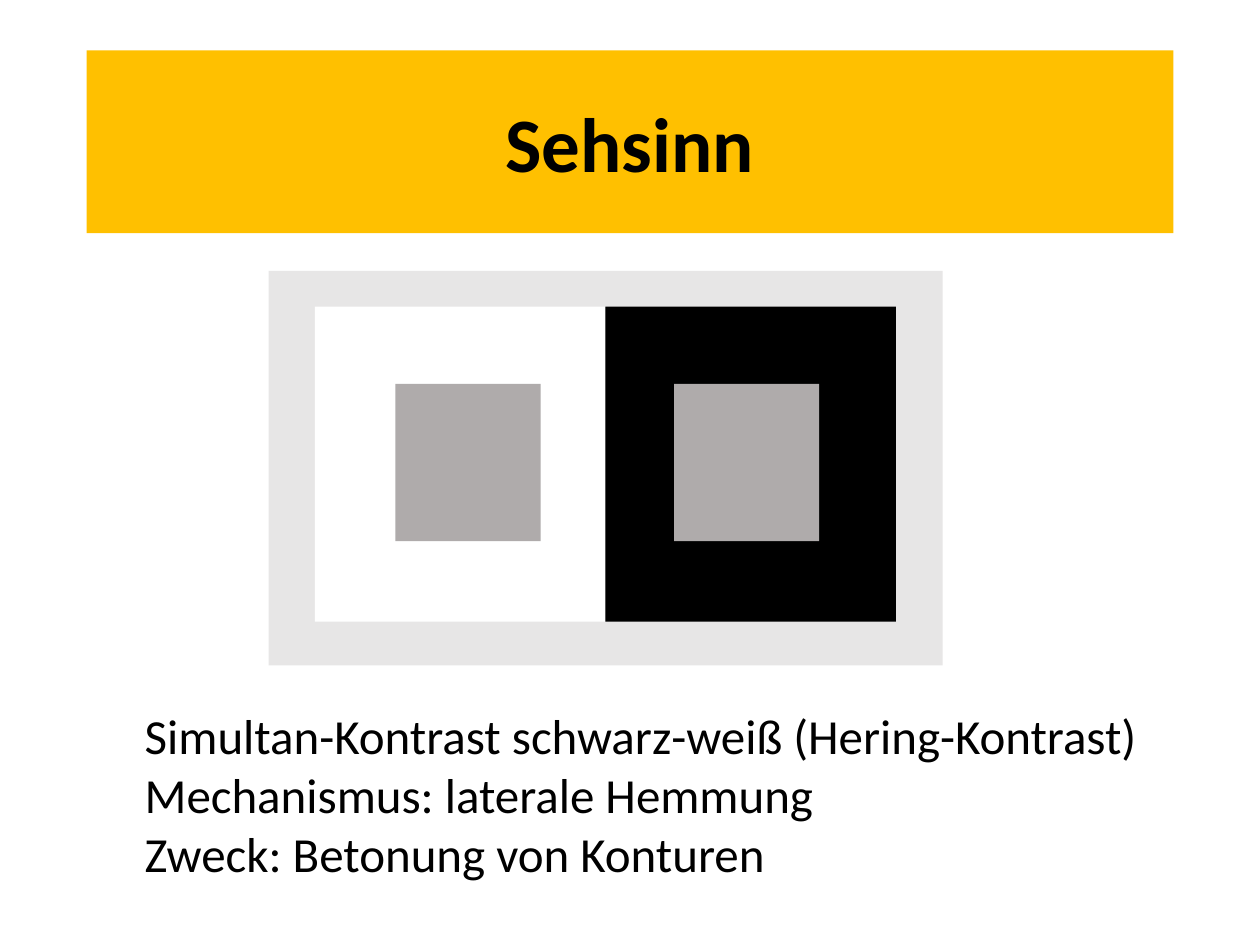
from typing import NamedTuple

from pptx import Presentation
from pptx.dml.color import RGBColor
from pptx.enum.shapes import MSO_SHAPE as Preset
from pptx.enum.text import MSO_ANCHOR as Anchor, MSO_AUTO_SIZE as AutoSize, PP_ALIGN as Align
from pptx.shapes.autoshape import Shape
from pptx.slide import Slide
from pptx.text.text import TextFrame
from pptx.util import Pt


class Box(NamedTuple):
    left: float
    top: float
    width: float
    height: float


class Contrast(NamedTuple):
    field_color: str
    patch_left: float


FONT = "Calibri"
BLACK = "000000"
HEADING_BOX = Box(49.5, 28.8, 621, 104.4)
FRAME_BOX = Box(153.5, 154.8, 385.2, 225.4)
FIELD_BOX = Box(180, 175.2, 166, 180)
PATCH_TOP = 219.3
CONTRASTS = [Contrast("FFFFFF", 226), Contrast(BLACK, 385.2)]
EXPLANATION_BOX = Box(75.6, 399.6, 582.5, 108.7)
EXPLANATION = [
    "Simultan-Kontrast schwarz-weiß (Hering-Kontrast)",
    "Mechanismus: laterale Hemmung",
    "Zweck: Betonung von Konturen",
]


def rgb(color: str) -> RGBColor:
    return RGBColor.from_string(color)


def add_rectangle(slide: Slide, box: Box, color: str) -> Shape:
    rectangle = slide.shapes.add_shape(Preset.RECTANGLE, *map(Pt, box))
    rectangle.shadow.inherit = False
    rectangle.fill.solid()
    rectangle.fill.fore_color.rgb = rgb(color)
    rectangle.line.fill.background()
    return rectangle


def write(frame: TextFrame, text: str, size: float, align: Align, bold: bool = False) -> None:
    frame.text = text
    frame.word_wrap = True
    for paragraph in frame.paragraphs:
        paragraph.alignment = align
        for run in paragraph.runs:
            run.font.name = FONT
            run.font.size = Pt(size)
            run.font.bold = bold
            run.font.color.rgb = rgb(BLACK)


def add_contrast_figure(slide: Slide) -> None:
    """Draw equal grey patches on a white and a black field."""
    add_rectangle(slide, FRAME_BOX, "E7E6E6")
    for column, contrast in enumerate(CONTRASTS):
        field = FIELD_BOX._replace(left=FIELD_BOX.left + column * FIELD_BOX.width)
        patch = Box(contrast.patch_left, PATCH_TOP, field.width / 2, field.height / 2)
        add_rectangle(slide, field, contrast.field_color)
        add_rectangle(slide, patch, "AFABAB")


def main() -> None:
    presentation = Presentation()
    presentation.slide_width, presentation.slide_height = Pt(720), Pt(540)
    slide = presentation.slides.add_slide(presentation.slide_layouts[6])

    heading = add_rectangle(slide, HEADING_BOX, "FFC000").text_frame
    heading.vertical_anchor = Anchor.MIDDLE
    write(heading, "Sehsinn", 44, Align.CENTER, bold=True)

    add_contrast_figure(slide)

    explanation = slide.shapes.add_textbox(*map(Pt, EXPLANATION_BOX)).text_frame
    write(explanation, "\n".join(EXPLANATION), 28, Align.LEFT)
    explanation.auto_size = AutoSize.SHAPE_TO_FIT_TEXT

    presentation.save("out.pptx")


if __name__ == "__main__":
    main()
